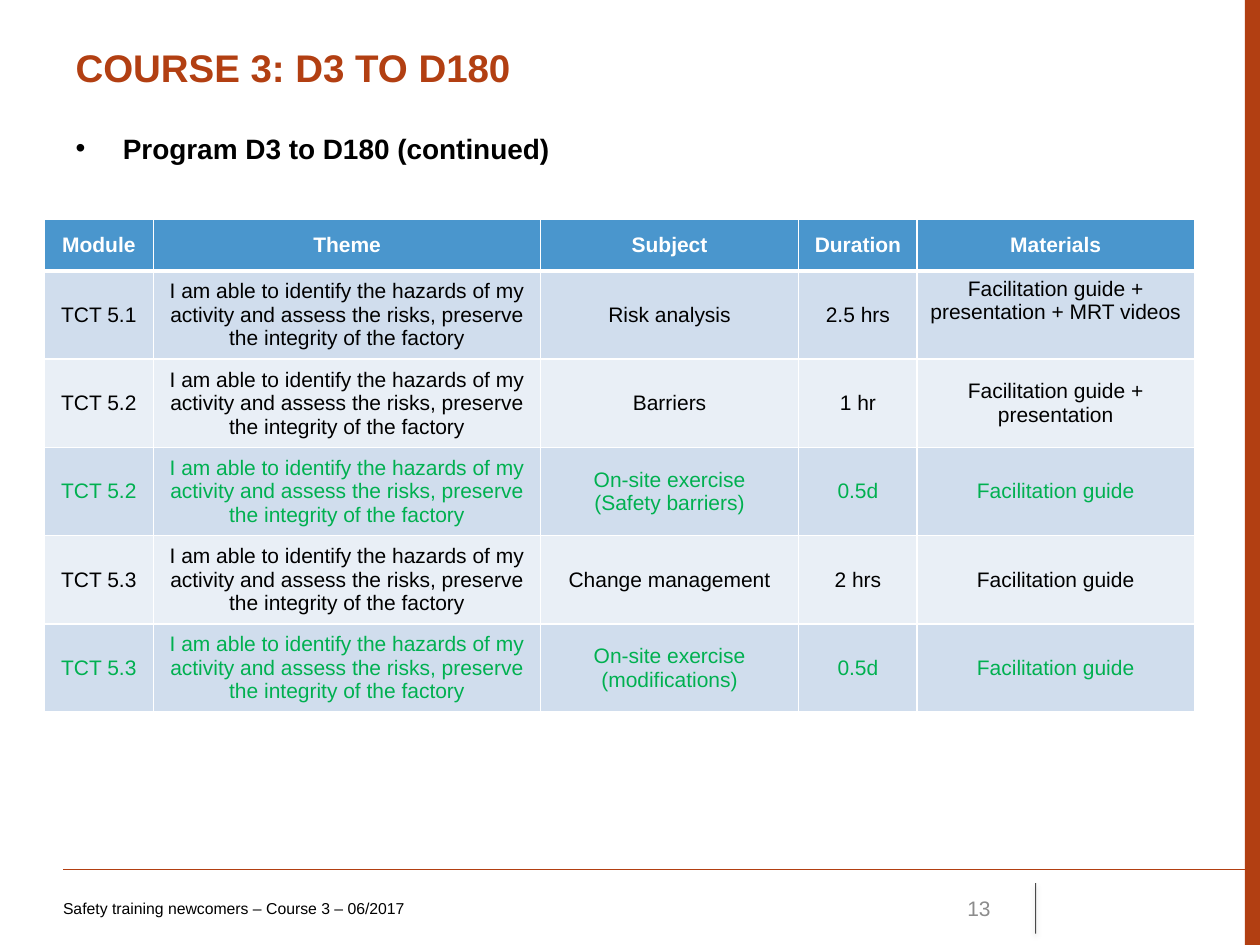
from lxml import etree
from pptx import Presentation
from pptx.dml.color import RGBColor
from pptx.enum.shapes import MSO_CONNECTOR, MSO_SHAPE
from pptx.enum.text import MSO_ANCHOR, MSO_AUTO_SIZE, PP_ALIGN
from pptx.oxml import parse_xml
from pptx.oxml.ns import nsdecls, qn
from pptx.util import Inches, Pt

LEFT, CENTER, RIGHT = PP_ALIGN.LEFT, PP_ALIGN.CENTER, PP_ALIGN.RIGHT
TOP, MIDDLE = MSO_ANCHOR.TOP, MSO_ANCHOR.MIDDLE
RECT, STRAIGHT = MSO_SHAPE.RECTANGLE, MSO_CONNECTOR.STRAIGHT
NO_FIT = MSO_AUTO_SIZE.NONE

RUST, BLACK, WHITE, GREY, GREEN = "B23F12", "000000", "FFFFFF", "8C8C8C", "00B050"
HEAD, BANDS = "4A96CD", ("D0DDED", "E9EFF6")

THEME = ("I am able to identify the hazards of my activity and assess "
         "the risks, preserve the integrity of the factory")
GUIDE = "Facilitation guide"
HEADS = ("Module", "Theme", "Subject", "Duration", "Materials")
COURSES = (
    ("TCT 5.1", "Risk analysis", "2.5 hrs", GUIDE + " + presentation + MRT videos", BLACK),
    ("TCT 5.2", "Barriers", "1 hr", GUIDE + " + presentation", BLACK),
    ("TCT 5.2", "On-site exercise\n(Safety barriers)", "0.5d", GUIDE, GREEN),
    ("TCT 5.3", "Change management", "2 hrs", GUIDE, BLACK),
    ("TCT 5.3", "On-site exercise\n(modifications)", "0.5d", GUIDE, GREEN),
)
WIDTHS = (0.87, 3.07, 2.05, 0.94, 2.2)
HEAD_H, ROW_H = 0.41, 0.66


def rgb(color):
    return RGBColor.from_string(color)


def put_text(frame, text, size=12, color=BLACK, bold=False, align=LEFT):
    """Fill a frame, one paragraph for each line of text."""
    frame.word_wrap = True
    frame.text = text
    for para in frame.paragraphs:
        para.alignment = align
        for run in para.runs:
            font = run.font
            font.name, font.size, font.bold = "Arial", Pt(size), bold
            font.color.rgb = rgb(color)


def place(shape, left, top, width, height):
    shape.left, shape.top = Inches(left), Inches(top)
    shape.width, shape.height = Inches(width), Inches(height)


def add_label(slide, text, box, inset=0.1, **style):
    label = slide.shapes.add_textbox(*map(Inches, box))
    frame = label.text_frame
    put_text(frame, text, **style)
    frame.vertical_anchor = MIDDLE
    frame.margin_left = Inches(inset)


def add_bar(slide, box, color):
    bar = slide.shapes.add_shape(RECT, *map(Inches, box))
    bar.shadow.inherit = False
    bar.fill.solid()
    bar.fill.fore_color.rgb = rgb(color)
    bar.line.fill.background()


def add_rule(slide, ends, color, width, alpha=None, shadow=""):
    rule = slide.shapes.add_connector(STRAIGHT, *map(Inches, ends))
    rule.line.color.rgb = rgb(color)
    rule.line.width = Pt(width)
    if alpha:
        tone = rule.line._ln.find(".//" + qn("a:srgbClr"))
        etree.SubElement(tone, qn("a:alpha")).set("val", str(alpha * 1000))
    rule._element.spPr.append(
        parse_xml(f"<a:effectLst {nsdecls('a')}>{shadow}</a:effectLst>"))


def add_bullet(para, color):
    props = para._p.get_or_add_pPr()
    props.set("marL", str(Inches(0.31)))
    props.set("indent", str(Inches(-0.31)))
    for xml in (f'<a:buClr {nsdecls("a")}><a:srgbClr val="{color}"/></a:buClr>',
                f'<a:buSzPct {nsdecls("a")} val="120000"/>',
                f'<a:buFont {nsdecls("a")} typeface="Arial"/>',
                f'<a:buChar {nsdecls("a")} char="●"/>'):
        props.append(parse_xml(xml))


def set_edges(cell, bottom):
    props = cell._tc.get_or_add_tcPr()
    for side, width in (("L", 1), ("R", 1), ("T", 1), ("B", bottom)):
        props.append(parse_xml(
            f'<a:ln{side} {nsdecls("a")} w="{Pt(width)}"><a:solidFill>'
            f'<a:srgbClr val="{WHITE}"/></a:solidFill></a:ln{side}>'))


def fill_row(row, texts, fill, edge=1, **style):
    for cell, text in zip(row.cells, texts):
        put_text(cell.text_frame, text, align=CENTER, **style)
        cell.vertical_anchor = MIDDLE
        set_edges(cell, edge)
        cell.fill.solid()
        cell.fill.fore_color.rgb = rgb(fill)


def add_program(slide):
    height = HEAD_H + ROW_H * len(COURSES)
    box = (0.35, 1.74, sum(WIDTHS), height)
    table = slide.shapes.add_table(
        len(COURSES) + 1, len(HEADS), *map(Inches, box)).table
    for col, width in zip(table.columns, WIDTHS):
        col.width = Inches(width)
    head, *rows = table.rows
    head.height = Inches(HEAD_H)
    fill_row(head, HEADS, HEAD, edge=3, color=WHITE, bold=True)
    for i, (row, course) in enumerate(zip(rows, COURSES)):
        code, subject, time, items, color = course
        row.height = Inches(ROW_H)
        fill_row(row, (code, THEME, subject, time, items), BANDS[i % 2], color=color)
    table.cell(1, 4).vertical_anchor = TOP


def add_heads(slide):
    title, body = slide.placeholders
    place(title, 0.5, 0.3, 8.99, 0.69)
    place(body, 0.5, 0.99, 8.99, 0.47)
    put_text(title.text_frame, "COURSE 3: D3 TO D180", size=22, color=RUST, bold=True)
    para = body.text_frame.paragraphs[0]
    add_bullet(para, RUST)
    put_text(body.text_frame, "Program D3 to D180 (continued)", size=16, bold=True)
    para.space_before, para.space_after = Pt(0), Pt(3)
    for shape in (title, body):
        shape.text_frame.vertical_anchor = TOP
        shape.text_frame.auto_size = NO_FIT


def add_frame(slide):
    """Draw the side bar, the footer rules and the footer text."""
    add_bar(slide, (9.88, 0, 0.12, 7.5), RUST)
    add_rule(slide, (0.5, 6.9, 10, 6.9), RUST, 0.75)
    shadow = ('<a:outerShdw blurRad="39370" dist="20320" dir="5400000">'
              f'<a:srgbClr val="{BLACK}"><a:alpha val="38000"/></a:srgbClr>'
              '</a:outerShdw>')
    add_rule(slide, (8.22, 7.01, 8.22, 7.41), BLACK, 0.5, 70, shadow)
    add_label(slide, "13", (7.17, 7.01, 0.79, 0.4), color=GREY, align=RIGHT)
    add_label(slide, "Safety training newcomers – Course 3 – 06/2017",
              (0.5, 7.01, 6.08, 0.4), inset=0, size=9)


def main():
    deck = Presentation()
    deck.slide_width, deck.slide_height = Inches(10), Inches(7.5)
    slide = deck.slides.add_slide(deck.slide_layouts[1])
    add_frame(slide)
    add_heads(slide)
    add_program(slide)
    deck.save("out.pptx")


if __name__ == "__main__":
    main()
